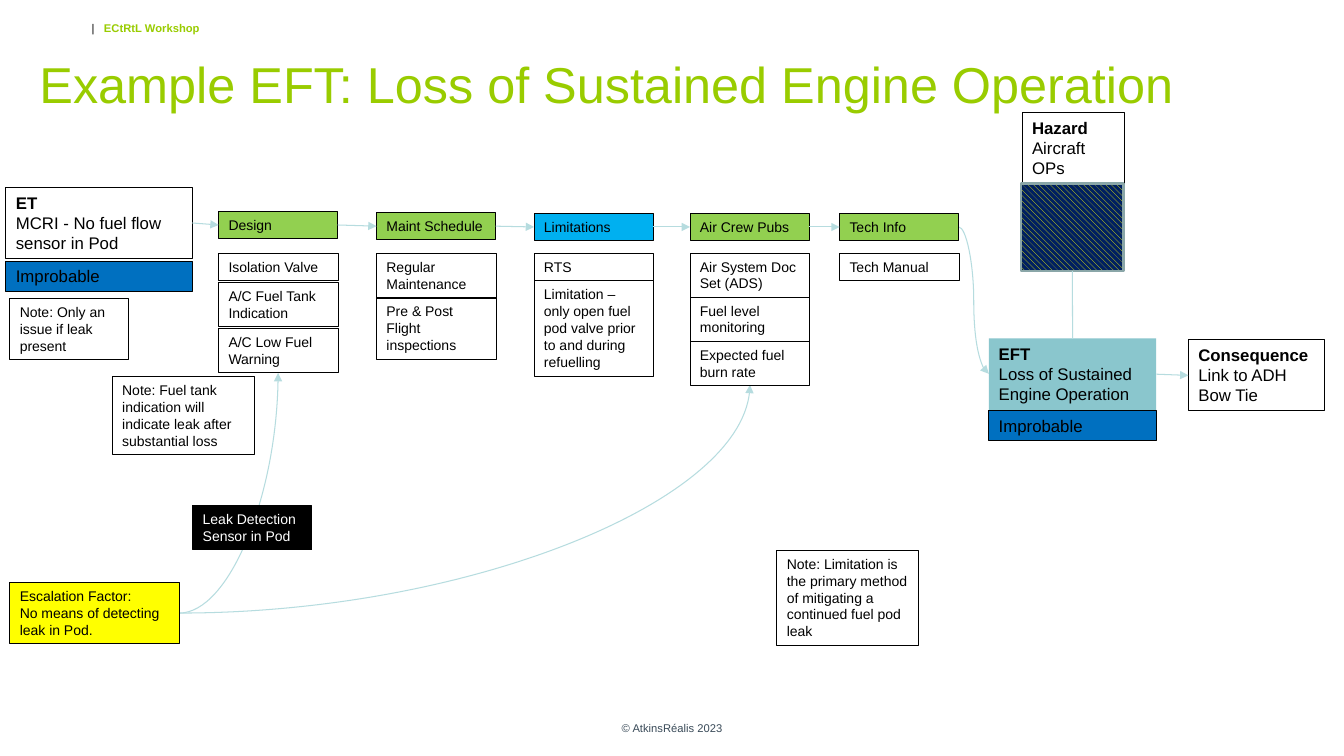
import pptx
import pptx.dml.color
import pptx.enum.dml
import pptx.enum.shapes
import pptx.enum.text
import pptx.oxml
import pptx.oxml.ns
import pptx.util

Cm = pptx.util.Cm
Pt = pptx.util.Pt
RGBColor = pptx.dml.color.RGBColor
qn = pptx.oxml.ns.qn
CONNECTOR = pptx.enum.shapes.MSO_CONNECTOR
RECTANGLE = pptx.enum.shapes.MSO_SHAPE.RECTANGLE
ANCHOR = pptx.enum.text.MSO_ANCHOR
ALIGN = pptx.enum.text.PP_ALIGN

BLACK = RGBColor(0x00, 0x00, 0x00)
WHITE = RGBColor(0xFF, 0xFF, 0xFF)
LIME = RGBColor(0x99, 0xCC, 0x00)
SLATE = RGBColor(0x39, 0x4A, 0x58)
GREEN = RGBColor(0x92, 0xD0, 0x50)
SKY = RGBColor(0x00, 0xB0, 0xF0)
BLUE = RGBColor(0x00, 0x70, 0xC0)
NAVY = RGBColor(0x00, 0x20, 0x60)
YELLOW = RGBColor(0xFF, 0xFF, 0x00)
TEAL = RGBColor(0x8A, 0xC6, 0xCD)
GREY = RGBColor(0x8A, 0xA6, 0xA8)
PALE = RGBColor(0xB6, 0xDC, 0xDF)


def add_box(x, y, w, lines, paragraphs, size=10, fill=None, color=BLACK, outlined=True):
    height = 0.25 + 0.043 * size * lines
    sp = s.shapes.add_shape(RECTANGLE, Cm(x), Cm(y), Cm(w), Cm(height))
    sp.shadow.inherit = False
    if fill is None:
        sp.fill.background()
    else:
        sp.fill.solid()
        sp.fill.fore_color.rgb = fill
    if outlined:
        sp.line.color.rgb = BLACK
        sp.line.width = Pt(0.75)
    else:
        sp.line.fill.background()
    tf = sp.text_frame
    tf.word_wrap = True
    tf.auto_size = pptx.enum.text.MSO_AUTO_SIZE.SHAPE_TO_FIT_TEXT
    tf.vertical_anchor = ANCHOR.TOP
    for i, text in enumerate(paragraphs):
        p = tf.add_paragraph() if i else tf.paragraphs[0]
        p.alignment = ALIGN.LEFT
        r = p.add_run()
        r.text = text
        r.font.name = "Arial"
        r.font.size = Pt(size)
        r.font.bold = size == 12 and len(paragraphs) > 1 and i == 0
        r.font.color.rgb = color
    return sp


def add_line(kind, x1, y1, x2, y2, arrow=True):
    c = s.shapes.add_connector(kind, Cm(x1), Cm(y1), Cm(x2), Cm(y2))
    c.line.color.rgb = PALE
    c.line.width = Pt(0.75)
    if arrow:
        tail = pptx.oxml.parse_xml(
            '<a:tailEnd xmlns:a="http://schemas.openxmlformats.org/drawingml/2006/main" type="triangle"/>')
        c.line._get_or_add_ln().append(tail)
    spPr = c._element.spPr
    spPr.append(spPr.makeelement(qn("a:effectLst"), {}))
    return c


prs = pptx.Presentation()
prs.slide_width = Cm(33.87)
prs.slide_height = Cm(19.05)
s = prs.slides.add_slide(prs.slide_layouts[5])

title = s.shapes.title
title.left, title.top, title.width, title.height = Cm(0.74), Cm(1.19), Cm(30.68), Cm(1.8)
tf = title.text_frame
tf.word_wrap = True
tf.auto_size = pptx.enum.text.MSO_AUTO_SIZE.NONE
tf.vertical_anchor = ANCHOR.BOTTOM
p = tf.paragraphs[0]
p.alignment = ALIGN.LEFT
r = p.add_run()
r.text = "Example EFT: Loss of Sustained Engine Operation"
r.font.name = "Arial"
r.font.size = Pt(36)
r.font.color.rgb = LIME

tf = s.shapes.add_textbox(Cm(0.66), Cm(0.53), Cm(27.71), Cm(1.37)).text_frame
tf.word_wrap = True
tf.margin_left = Cm(1.65)
tf.margin_top = tf.margin_right = tf.margin_bottom = 0
p = tf.paragraphs[0]
tabs = pptx.oxml.parse_xml(
    '<a:tabLst xmlns:a="http://schemas.openxmlformats.org/drawingml/2006/main">'
    f'<a:tab pos="{Cm(0.31)}" algn="l"/></a:tabLst>')
p._p.get_or_add_pPr().append(tabs)
for text, color, bold in [("|\t", BLACK, False), ("ECtRtL Workshop", LIME, True)]:
    r = p.add_run()
    r.text = text
    r.font.name = "Arial"
    r.font.size = Pt(8)
    r.font.bold = bold
    r.font.color.rgb = color

tf = s.shapes.add_textbox(Cm(11.58), Cm(17.83), Cm(10.72), Cm(1.02)).text_frame
tf.word_wrap = True
tf.vertical_anchor = ANCHOR.MIDDLE
p = tf.paragraphs[0]
p.alignment = ALIGN.CENTER
r = p.add_run()
r.text = "© AtkinsRéalis 2023"
r.font.name = "Arial"
r.font.size = Pt(8)
r.font.color.rgb = SLATE

add_line(CONNECTOR.CURVE, 24.16, 5.72, 24.92, 9.42)
for x, y in [(7.01, 9.4), (18.9, 9.7)]:
    c = add_line(CONNECTOR.CURVE, 4.52, 15.45, x, y)
    c._element.spPr.find(qn("a:prstGeom")).set("prst", "curvedConnector2")

et = add_box(0.15, 4.72, 4.7, 3, ["ET", "MCRI - No fuel flow sensor in Pod"], 12)
add_box(0.15, 6.58, 4.7, 1, ["Improbable"], 12, BLUE)
add_box(25.76, 2.84, 2.59, 3, ["Hazard", "Aircraft OPs"], 12)
eft = add_box(24.92, 8.53, 4.22, 3, ["EFT", "Loss of Sustained Engine Operation"], 12, TEAL, outlined=False)
add_box(24.92, 10.34, 4.22, 1, ["Improbable"], 12, BLUE)
consequence = add_box(29.95, 8.56, 3.43, 3, ["Consequence", "Link to ADH Bow Tie"], 12)

hazard = s.shapes.add_shape(RECTANGLE, Cm(25.73), Cm(4.62), Cm(2.59), Cm(2.21))
hazard.shadow.inherit = False
hazard.fill.patterned()
hazard.fill.pattern = pptx.enum.dml.MSO_PATTERN.WIDE_DOWNWARD_DIAGONAL
hazard.fill.fore_color.rgb = YELLOW
hazard.fill.back_color.rgb = NAVY
hazard.line.color.rgb = GREY
hazard.line.width = Pt(2)

barriers = [
    ("Design", 5.51, 5.33, GREEN, 6.4, 0.05,
     [("Isolation Valve", 1), ("A/C Fuel Tank Indication", 2), ("A/C Low Fuel Warning", 2)]),
    ("Maint Schedule", 9.49, 5.36, GREEN, 6.4, 0,
     [("Regular Maintenance", 2), ("Pre & Post Flight inspections", 3)]),
    ("Limitations", 13.46, 5.38, SKY, 6.4, 0,
     [("RTS", 1), ("Limitation – only open fuel pod valve prior to and during refuelling", 5)]),
    ("Air Crew Pubs", 17.39, 5.38, GREEN, 6.38, 0,
     [("Air System Doc Set (ADS)", 2), ("Fuel level monitoring", 2), ("Expected fuel burn rate", 2)]),
    ("Tech Info", 21.16, 5.38, GREEN, 6.38, 0, [("Tech Manual", 1)]),
]
chain = [et]
for name, x, y, fill, top, gap, measures in barriers:
    chain.append(add_box(x, y, 3, 1, [name], fill=fill))
    for text, lines in measures:
        sp = add_box(x, top, 3.02, lines, [text])
        top += sp.height / Cm(1) + gap

for x, y, w, lines, paragraphs, fill, color in [
    (0.25, 7.52, 3, 3, ["Note: Only an issue if leak present"], None, BLACK),
    (2.83, 9.49, 3.58, 4, ["Note: Fuel tank indication will indicate leak after substantial loss"], None, BLACK),
    (19.58, 13.87, 3.58, 5,
     ["Note: Limitation is the primary method of mitigating a continued fuel pod leak"], None, BLACK),
    (4.86, 12.75, 3, 2, ["Leak Detection Sensor in Pod"], BLACK, WHITE),
    (0.25, 14.68, 4.27, 3, ["Escalation Factor:", "No means of detecting leak in Pod."], YELLOW, BLACK),
]:
    add_box(x, y, w, lines, paragraphs, fill=fill, color=color)

for start, end in [*zip(chain, chain[1:]), (eft, consequence)]:
    c = add_line(CONNECTOR.STRAIGHT, 0, 0, 1, 1)
    c.begin_connect(start, 3)
    c.end_connect(end, 1)
c = add_line(CONNECTOR.STRAIGHT, 0, 0, 1, 1, arrow=False)
c.begin_connect(hazard, 2)
c.end_connect(eft, 0)

prs.save("out.pptx")
